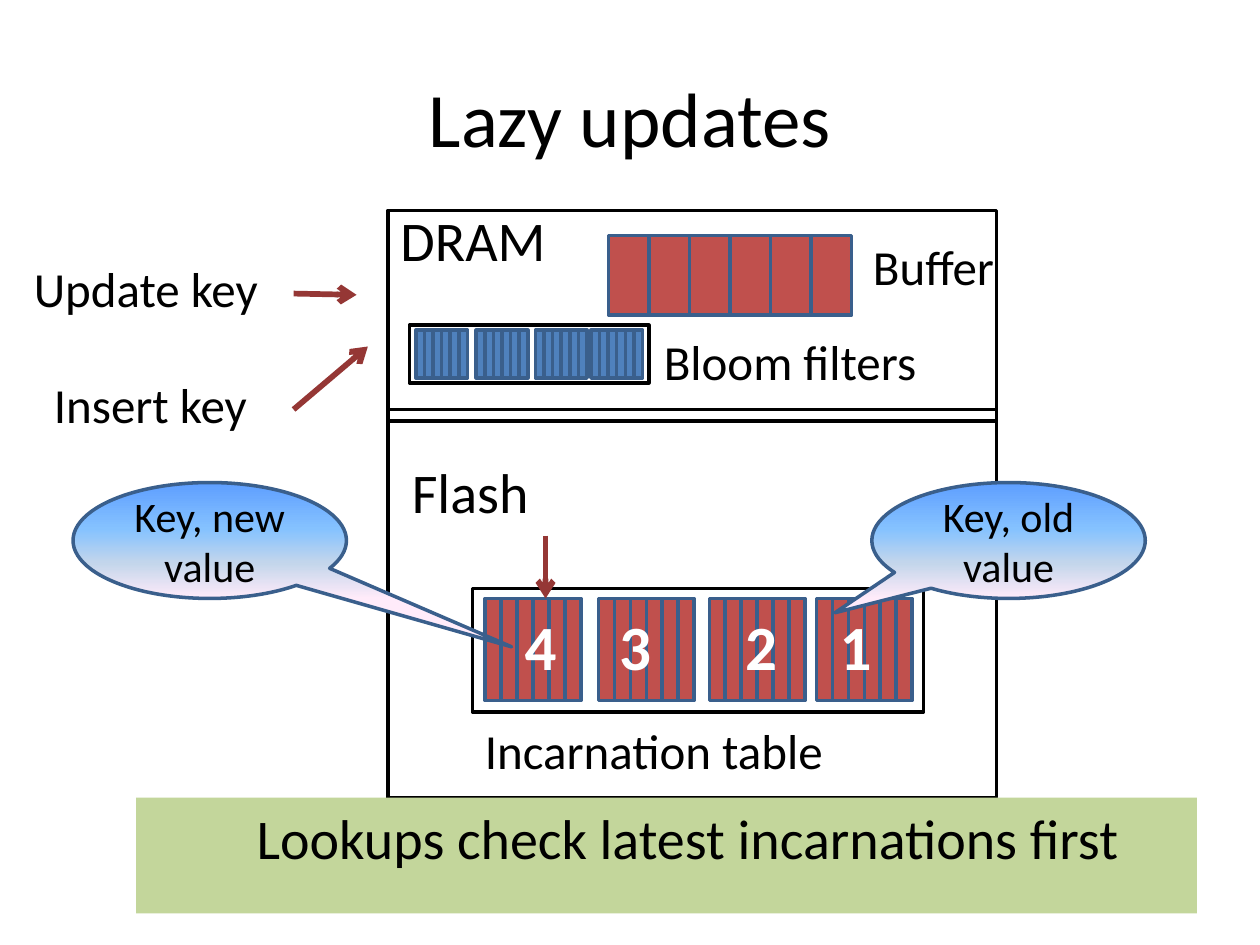
from copy import deepcopy

from pptx import Presentation
from pptx.dml.color import RGBColor
from pptx.enum.shapes import MSO_CONNECTOR, MSO_SHAPE
from pptx.enum.text import MSO_ANCHOR, MSO_AUTO_SIZE, PP_ALIGN
from pptx.oxml.ns import qn
from pptx.util import Inches, Pt

RECT = MSO_SHAPE.RECTANGLE
CALLOUT = MSO_SHAPE.OVAL_CALLOUT
STRAIGHT = MSO_CONNECTOR.STRAIGHT
TOP, MIDDLE = MSO_ANCHOR.TOP, MSO_ANCHOR.MIDDLE
LEFT, CENTER = PP_ALIGN.LEFT, PP_ALIGN.CENTER
NO_FIT = MSO_AUTO_SIZE.NONE

COLORS = {
    "black": "000000", "white": "FFFFFF", "red": "C0504D", "blue": "4F81BD",
    "edge": "3A5F8C", "arrow": "953735", "green": "C3D69B",
}
GRADIENT = [(0, "5E9EFF"), (0.4, "85C2FF"), (0.7, "C4D6EB"), (1, "FFEBFA")]

TITLE = ("Lazy updates", (0.5, 0.3, 9, 1.25))
BANNER = ("Lookups check latest incarnations first", (1.08, 6.33, 8.42, 0.92))
FRAMES = [
    (3.08, 1.67, 4.83, 1.67),
    (3.08, 3.25, 4.83, 3.08),
    (3.75, 4.67, 3.58, 0.98),
    (3.25, 2.58, 1.9, 0.46),
]
CELLS_PER_BLOCK = 6
BLOCKS = [
    ("red", [4.83], 1.87, 1.93, 0.63),
    ("red", [3.85, 4.75, 5.63, 6.48], 4.75, 0.76, 0.81),
    ("blue", [3.3, 3.78, 4.25, 4.69], 2.62, 0.41, 0.38),
]
LABELS = [
    ("DRAM", (3.08, 1.58, 1.92, 0.64), 32),
    ("Flash", (3.17, 3.58, 1.83, 0.64), 32),
    ("Buffer", (6.83, 1.83, 1.42, 0.57), 28),
    ("Incarnation table", (3.75, 5.67, 3.67, 0.57), 28),
    ("Bloom filters", (5.17, 2.58, 2.75, 0.57), 28),
    ("Update key", (0.17, 2, 2.17, 0.57), 28),
    ("Insert key", (0.33, 2.92, 2.17, 0.57), 28),
]
INCARNATIONS = [("4", 3.75), ("3", 4.5), ("2", 5.5), ("1", 6.25)]
ARROWS = [
    (2.33, 2.33, 2.83, 2.34),
    (2.33, 3.25, 2.92, 2.75),
    (4.33, 4.25, 4.33, 4.75),
]
CALLOUTS = [
    ("Key, new value", 0.58, (1.104, 0.917)),
    ("Key, old value", 6.92, (-0.635, 0.623)),
]


def rgb(name):
    return RGBColor.from_string(COLORS[name])


def inches(values):
    return [Inches(v) for v in values]


def place(sp, box):
    for name, value in zip(("left", "top", "width", "height"), inches(box)):
        setattr(sp, name, value)


def write(sp, text, size, color="black", align=LEFT, anchor=TOP, bold=False):
    tf = sp.text_frame
    frame_format = {"word_wrap": True, "auto_size": NO_FIT, "vertical_anchor": anchor}
    for name, value in frame_format.items():
        setattr(tf, name, value)
    p = tf.paragraphs[0]
    p.alignment = align
    r = p.add_run()
    r.text = text
    for name, value in {"name": "Calibri", "size": Pt(size), "bold": bold}.items():
        setattr(r.font, name, value)
    r.font.color.rgb = rgb(color)
    return p


def add_label(s, text, box, size, **style):
    write(s.shapes.add_textbox(*inches(box)), text, size, **style)


def add_outlined(s, kind, box, line, fill=None):
    sp = s.shapes.add_shape(kind, *inches(box))
    sp.shadow.inherit = False
    sp.line.color.rgb = rgb(line)
    sp.line.width = Pt(2)
    if fill:
        sp.fill.solid()
        sp.fill.fore_color.rgb = rgb(fill)
    else:
        sp.fill.background()
    return sp


def add_arrow(s, ends):
    line = s.shapes.add_connector(STRAIGHT, *inches(ends))
    line.line.color.rgb = rgb("arrow")
    line.line.width = Pt(3.25)
    sp_pr = line._element.spPr
    ln = sp_pr.find(qn("a:ln"))
    ln.append(ln.makeelement(qn("a:tailEnd"), {"type": "arrow"}))
    sp_pr.append(sp_pr.makeelement(qn("a:effectLst"), {}))


def add_callout(s, text, left, tip):
    sp = add_outlined(s, CALLOUT, (left, 3.83, 2.17, 0.92), "edge")
    for i, value in enumerate(tip):
        sp.adjustments[i] = value
    sp.fill.gradient()
    sp.fill.gradient_angle = 270
    stops = sp._element.spPr.find(".//" + qn("a:gsLst"))
    while len(stops) < len(GRADIENT):
        stops.append(deepcopy(stops[0]))
    for stop, (position, color) in zip(sp.fill.gradient_stops, GRADIENT):
        stop.position = position
        stop.color.rgb = RGBColor.from_string(color)
    write(sp, text, 24, align=CENTER, anchor=MIDDLE)


def add_banner(sp, text, box):
    place(sp, box)
    sp.fill.solid()
    sp.fill.fore_color.rgb = rgb("green")
    p_pr = write(sp, text, 32, align=CENTER)._p.get_or_add_pPr()
    p_pr.set("marL", str(Inches(0.34)))
    p_pr.set("indent", "0")
    p_pr.append(p_pr.makeelement(qn("a:buNone"), {}))


def main():
    prs = Presentation()
    prs.slide_width, prs.slide_height = Inches(10), Inches(7.5)
    s = prs.slides.add_slide(prs.slide_layouts[1])
    title, body = s.placeholders

    place(title, TITLE[1])
    write(title, TITLE[0], 44, align=CENTER, anchor=MIDDLE)
    for box in FRAMES:
        add_outlined(s, RECT, box, "black")
    for fill, lefts, top, width, height in BLOCKS:
        cell = width / CELLS_PER_BLOCK
        for left in lefts:
            for i in range(CELLS_PER_BLOCK):
                add_outlined(s, RECT, (left + i * cell, top, cell, height), "edge", fill)
    for text, box, size in LABELS:
        add_label(s, text, box, size)
    for text, left in INCARNATIONS:
        add_label(s, text, (left, 4.58, 1.08, 1.08), 36,
                  color="white", align=CENTER, anchor=MIDDLE, bold=True)
    add_banner(body, *BANNER)
    s.shapes._spTree.append(body._element)
    for ends in ARROWS:
        add_arrow(s, ends)
    for callout in CALLOUTS:
        add_callout(s, *callout)
    prs.save("out.pptx")


if __name__ == "__main__":
    main()
